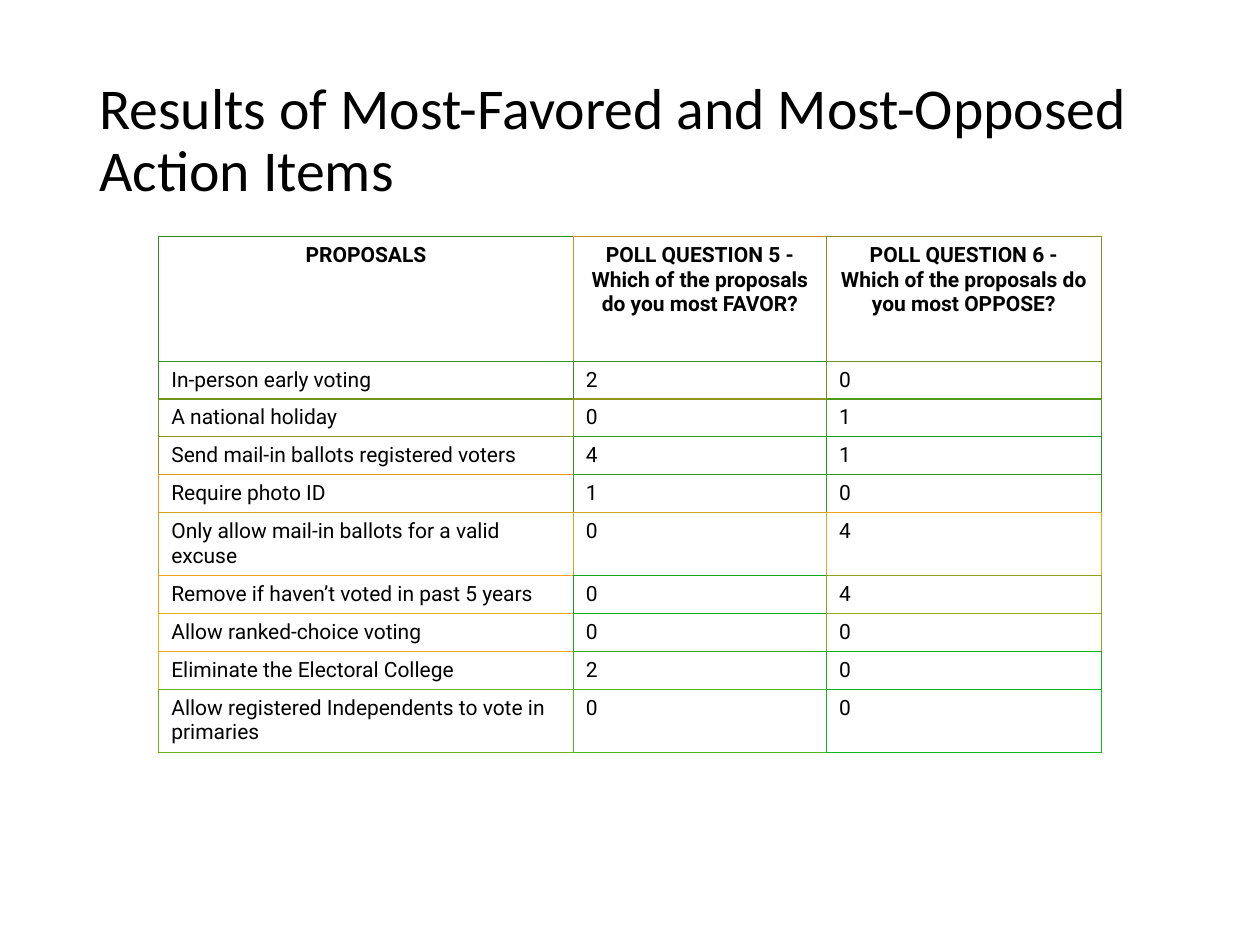
import dataclasses
import typing

import lxml.etree
import pptx
import pptx.dml.color
import pptx.enum.text
import pptx.oxml.ns
import pptx.util

Pt = pptx.util.Pt
Align = pptx.enum.text.PP_ALIGN
Anchor = pptx.enum.text.MSO_ANCHOR


@dataclasses.dataclass(frozen=True)
class Theme:
    text_color: str = "000000"
    title_font: str = "Calibri"
    title_size: float = 33
    table_font: str = "Roboto"
    table_size: float = 12
    border_width: float = 0.75


@dataclasses.dataclass(frozen=True)
class PollRow:
    labels: tuple[str, str, str]
    border_colors: tuple[str, str, str]
    height: float = 21.3
    header: bool = False


THEME = Theme()
TABLE_LEFT, TABLE_TOP = 90.7, 135.2
COLUMN_WIDTHS = (236.9, 144.7, 157)
TWO_LINE_HEIGHT = 35.4
HEADER_HEIGHT = 71.2

POLL_ROWS = (
    PollRow(
        (
            "PROPOSALS",
            "POLL QUESTION 5 -\nWhich of the proposals do you most FAVOR?",
            "POLL QUESTION 6 -\nWhich of the proposals do you most OPPOSE?",
        ),
        ("308B1D", "D08F1D", "908B1D"),
        HEADER_HEIGHT,
        True,
    ),
    PollRow(("In-person early voting", "2", "0"), ("30931D", "30931D", "70931D")),
    PollRow(("A national holiday", "0", "1"), ("70941D", "90961D", "50991D")),
    PollRow(("Send mail-in ballots registered voters", "4", "1"), ("90931D", "309B1D", "109E1D")),
    PollRow(("Require photo ID", "1", "0"), ("F09A1D", "309B1D", "309E1D")),
    PollRow(
        ("Only allow mail-in ballots for a valid excuse", "0", "4"),
        ("D0A41D", "D0A71D", "F0A51D"),
        TWO_LINE_HEIGHT,
    ),
    PollRow(("Remove if haven’t voted in past 5 years", "0", "4"), ("F0A51D", "10A61D", "90A21D")),
    PollRow(("Allow ranked-choice voting", "0", "0"), ("F0AE1D", "10AD1D", "90AA1D")),
    PollRow(("Eliminate the Electoral College", "2", "0"), ("F0AA1D", "30AF1D", "10B11D")),
    PollRow(
        ("Allow registered Independents to vote in primaries", "0", "0"),
        ("70B11D", "50B61D", "10B91D"),
        TWO_LINE_HEIGHT,
    ),
)


def write_text(
    text_frame: typing.Any,
    text: str,
    *,
    font: str,
    size: float,
    bold: bool = False,
    alignment: Align = Align.LEFT,
    line_spacing: float = 1.0,
    space_after: float = 0,
) -> None:
    text_frame.word_wrap = True
    paragraph = text_frame.paragraphs[0]
    paragraph.alignment = alignment
    paragraph.line_spacing = line_spacing
    paragraph.space_after = Pt(space_after)
    for index, line in enumerate(text.split("\n")):
        if index:
            paragraph.add_line_break()
        run = paragraph.add_run()
        run.text = line
        run.font.name = font
        run.font.size = Pt(size)
        run.font.bold = bold
        run.font.color.rgb = pptx.dml.color.RGBColor.from_string(THEME.text_color)


def draw_border(cell: typing.Any, side: str, color: str) -> None:
    properties = cell._tc.get_or_add_tcPr()
    qualified = pptx.oxml.ns.qn
    line = lxml.etree.SubElement(
        properties, qualified(f"a:ln{side}"), w=str(Pt(THEME.border_width))
    )
    fill = lxml.etree.SubElement(line, qualified("a:solidFill"))
    lxml.etree.SubElement(fill, qualified("a:srgbClr"), val=color)


def draw_title(slide: typing.Any, text: str) -> None:
    shape = slide.shapes.add_textbox(Pt(49.7), Pt(28.8), Pt(620.6), Pt(104.4))
    shape.text_frame.vertical_anchor = Anchor.MIDDLE
    write_text(
        shape.text_frame, text, font=THEME.title_font, size=THEME.title_size, line_spacing=0.9
    )


def draw_poll_table(slide: typing.Any, rows: tuple[PollRow, ...]) -> None:
    table = slide.shapes.add_table(
        len(rows),
        len(COLUMN_WIDTHS),
        Pt(TABLE_LEFT),
        Pt(TABLE_TOP),
        Pt(sum(COLUMN_WIDTHS)),
        Pt(sum(row.height for row in rows)),
    ).table
    table.first_row = False
    table.horz_banding = False
    for column, width in zip(table.columns, COLUMN_WIDTHS):
        column.width = Pt(width)
    for row_index, row in enumerate(rows):
        table.rows[row_index].height = Pt(row.height)
        row_below = rows[min(row_index + 1, len(rows) - 1)]
        for column_index, label in enumerate(row.labels):
            cell = table.cell(row_index, column_index)
            write_text(
                cell.text_frame,
                label,
                font=THEME.table_font,
                size=THEME.table_size,
                bold=row.header,
                alignment=Align.CENTER if row.header else Align.LEFT,
                space_after=8 if row.header else 0,
            )
            own_color = row.border_colors[column_index]
            right_color = row.border_colors[min(column_index + 1, len(COLUMN_WIDTHS) - 1)]
            draw_border(cell, "L", own_color)
            draw_border(cell, "R", right_color)
            draw_border(cell, "T", own_color)
            draw_border(cell, "B", row_below.border_colors[column_index])
            cell.fill.background()


def main() -> None:
    presentation = pptx.Presentation()
    presentation.slide_width = Pt(720)
    presentation.slide_height = Pt(540)
    slide = presentation.slides.add_slide(presentation.slide_layouts[6])
    draw_title(slide, "Results of Most-Favored and Most-Opposed Action Items")
    draw_poll_table(slide, POLL_ROWS)
    presentation.save("out.pptx")


if __name__ == "__main__":
    main()
